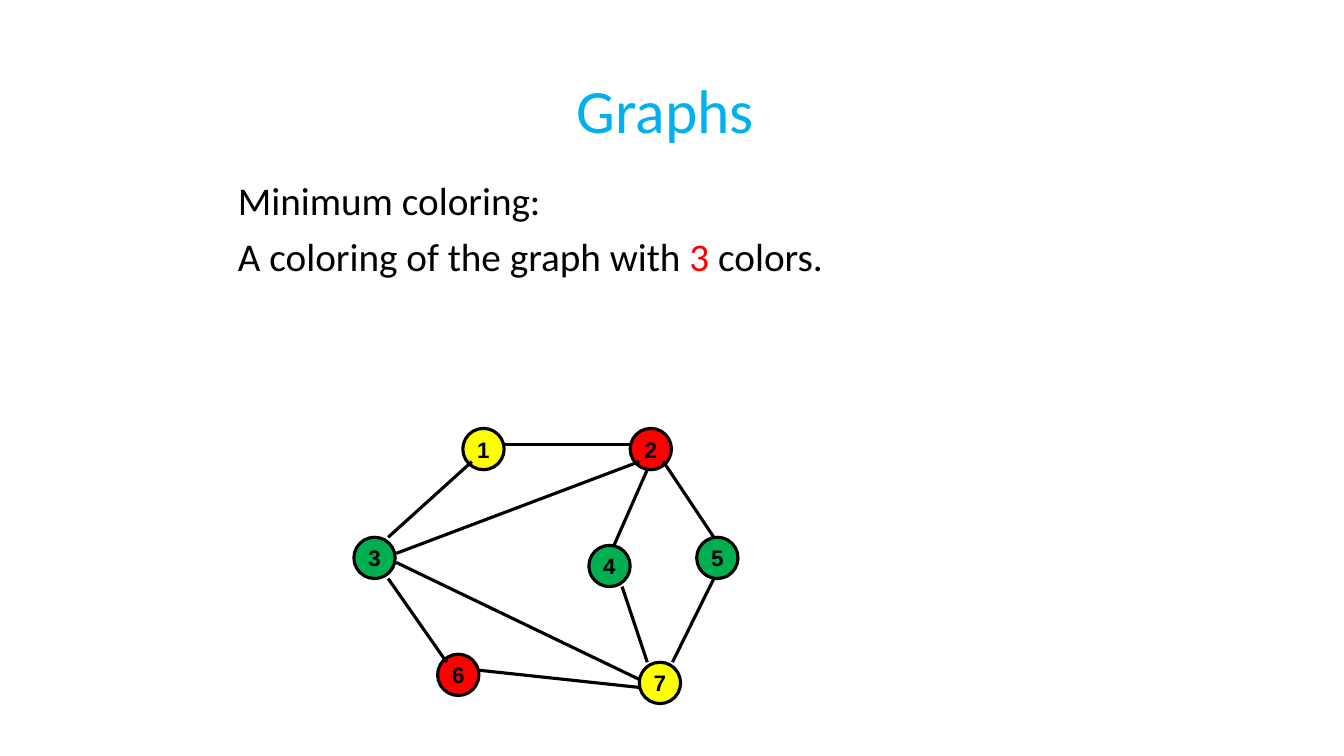
import dataclasses
import lxml.etree
import pptx
import pptx.dml.color
import pptx.enum.shapes
import pptx.enum.text
import pptx.oxml.ns
import pptx.util

Inches = pptx.util.Inches
Anchor = pptx.enum.text.MSO_ANCHOR
Align = pptx.enum.text.PP_ALIGN


@dataclasses.dataclass
class Theme:
    black: str = "000000"
    blue: str = "00B0F0"
    red: str = "FF0000"
    green: str = "00B050"
    yellow: str = "FFFF00"
    head: str = "Calibri"
    label: str = "Arial"
    title: int = 44
    body: int = 28
    node: int = 16
    line: float = 2.25


def color(code):
    return pptx.dml.color.RGBColor.from_string(code)


def style(item, values):
    for name, value in values.items():
        setattr(item, name, value)


class Deck:
    def __init__(self, theme):
        self.theme = theme
        self.show = pptx.Presentation()
        style(self.show, {"slide_width": Inches(13.33), "slide_height": Inches(7.5)})
        self.slide = self.show.slides.add_slide(self.show.slide_layouts[5])

    def place(self, shape, box):
        names = ("left", "top", "width", "height")
        style(shape, dict(zip(names, map(Inches, box))))

    def letter(self, para, runs, font, size, bold=False):
        for text, code in runs:
            run = para.add_run()
            run.text = text
            style(run.font, {"name": font, "size": pptx.util.Pt(size), "bold": bold})
            run.font.color.rgb = color(code)

    def title(self, text, box):
        shape = self.slide.shapes.title
        self.place(shape, box)
        frame = shape.text_frame
        style(frame, {"vertical_anchor": Anchor.MIDDLE, "word_wrap": True,
                      "auto_size": pptx.enum.text.MSO_AUTO_SIZE.NONE})
        para = frame.paragraphs[0]
        style(para, {"alignment": Align.CENTER, "line_spacing": 0.9})
        self.letter(para, [(text, self.theme.blue)], self.theme.head, self.theme.title)

    def body(self, lines, box):
        frame = self.slide.shapes.add_textbox(*map(Inches, box)).text_frame
        style(frame, {"word_wrap": True, "margin_left": Inches(0.19)})
        for i, runs in enumerate(lines):
            para = frame.add_paragraph() if i else frame.paragraphs[0]
            style(para, {"line_spacing": 0.9, "space_before": pptx.util.Pt(10 if i else 0)})
            self.letter(para, runs, self.theme.head, self.theme.body)

    def stroke(self, line):
        line.color.rgb = color(self.theme.black)
        line.width = pptx.util.Pt(self.theme.line)

    def node(self, text, left, top, fill, size=0.41):
        box = map(Inches, (left, top, size, size))
        shape = self.slide.shapes.add_shape(pptx.enum.shapes.MSO_SHAPE.OVAL, *box)
        shape.shadow.inherit = False
        shape.fill.solid()
        shape.fill.fore_color.rgb = color(fill)
        self.stroke(shape.line)
        frame = shape.text_frame
        style(frame, {"vertical_anchor": Anchor.MIDDLE, "word_wrap": False})
        para = frame.paragraphs[0]
        para.alignment = Align.CENTER
        self.letter(para, [(text, self.theme.black)], self.theme.label, self.theme.node, True)

    def edge(self, *ends):
        kind = pptx.enum.shapes.MSO_CONNECTOR.STRAIGHT
        link = self.slide.shapes.add_connector(kind, *map(Inches, ends))
        self.stroke(link.line)
        lxml.etree.SubElement(link._element.spPr, pptx.oxml.ns.qn("a:effectLst"))


def main():
    theme = Theme()
    deck = Deck(theme)
    deck.title("Graphs ", (0.92, 0.4, 11.5, 1.45))
    deck.body([
        [("Minimum coloring:", theme.black)],
        [("A coloring of the graph with", theme.black), (" 3 ", theme.red),
         ("colors.", theme.black)],
    ], (2.17, 1.75, 9, 2.25))

    nodes = [
        ("1", 4.59, 4.25, theme.yellow),
        ("2", 6.25, 4.25, theme.red),
        ("3", 3.51, 5.33, theme.green),
        ("4", 5.84, 5.41, theme.green),
        ("5", 6.91, 5.33, theme.green),
        ("6", 4.34, 6.49, theme.red),
        ("7", 6.34, 6.57, theme.yellow),
    ]
    for node in nodes:
        deck.node(*node)

    edges = [
        (3.85, 5.33, 4.68, 4.58),
        (5.01, 4.41, 6.25, 4.41),
        (6.58, 4.58, 7.08, 5.33),
        (6.42, 4.66, 6.09, 5.41),
        (3.93, 5.49, 6.34, 4.58),
        (3.85, 5.74, 4.43, 6.57),
        (3.93, 5.58, 6.34, 6.74),
        (4.76, 6.65, 6.34, 6.82),
        (6.17, 5.82, 6.42, 6.57),
        (7.08, 5.74, 6.67, 6.57),
    ]
    for edge in edges:
        deck.edge(*edge)
    deck.show.save("out.pptx")


if __name__ == "__main__":
    main()
